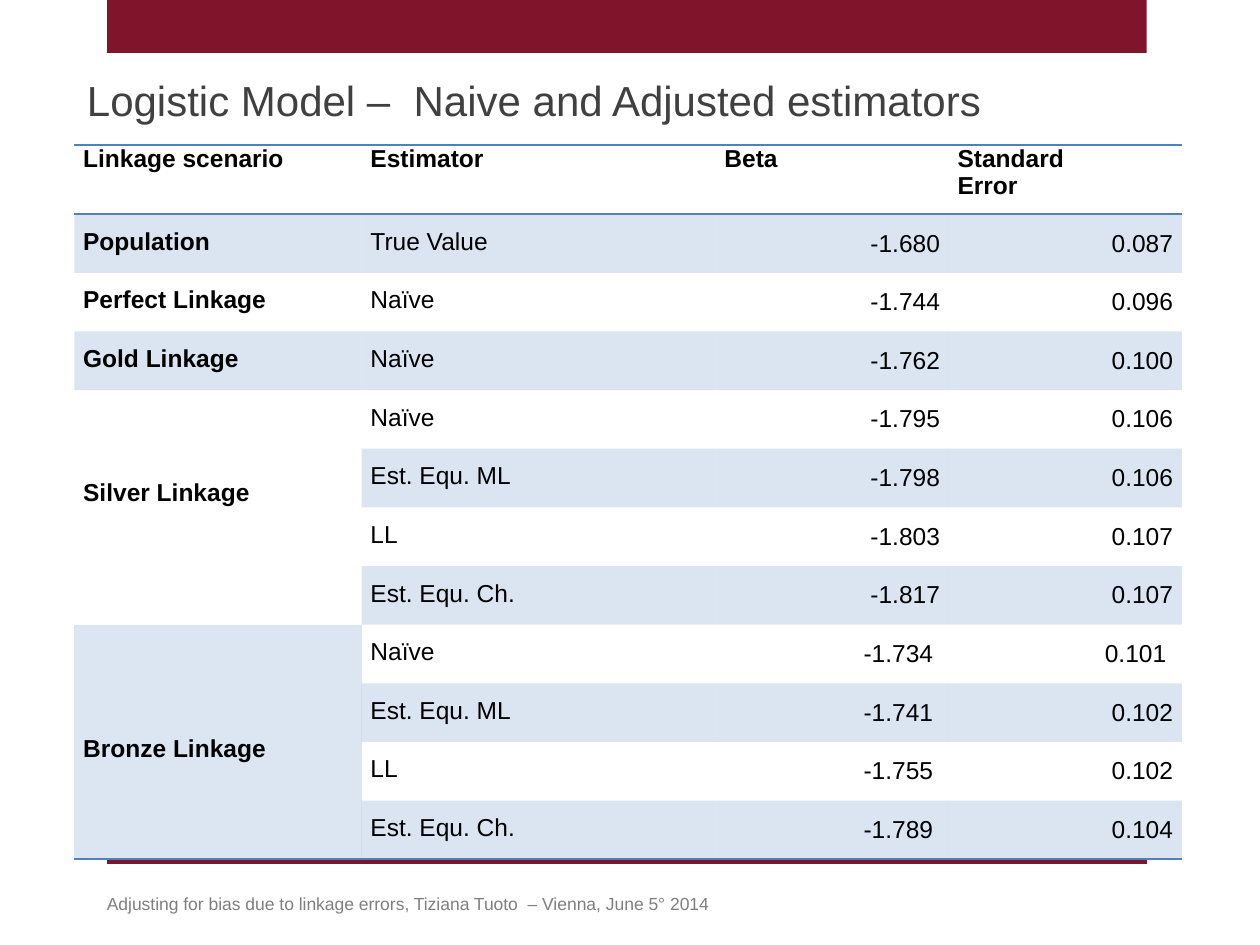
from typing import NamedTuple

from lxml.etree import SubElement
from pptx import Presentation
from pptx.dml.color import RGBColor
from pptx.enum.shapes import MSO_CONNECTOR, MSO_SHAPE
from pptx.enum.text import MSO_ANCHOR, MSO_AUTO_SIZE, PP_ALIGN
from pptx.oxml import parse_xml
from pptx.oxml.ns import nsdecls, qn
from pptx.util import Inches, Pt

MAROON = RGBColor(0x7F, 0x14, 0x2A)
BLUE = RGBColor(0x4F, 0x81, 0xBD)
PALE_BLUE = RGBColor(0xDC, 0xE6, 0xF2)
WHITE = RGBColor(0xFF, 0xFF, 0xFF)
BLACK = RGBColor(0, 0, 0)
DARK_GREY = RGBColor(0x40, 0x40, 0x40)
MID_GREY = RGBColor(0x7F, 0x7F, 0x7F)

FONT = "Arial"
HEADINGS = ("Linkage scenario", "Estimator", "Beta", "Standard\nError")
COLUMN_WIDTHS = (2.28, 2.81, 1.85, 1.85)
TABLE_HEIGHT = 5.67
HEADER_HEIGHT = 0.55


class Estimate(NamedTuple):
    estimator: str
    beta: str
    error: str


class Scenario(NamedTuple):
    name: str
    estimates: tuple[Estimate, ...]
    fill: RGBColor | None = None
    bottom_margin: float = 0


SCENARIOS = (
    Scenario("Population", (Estimate("True Value", "-1.680", "0.087"),), BLUE),
    Scenario("Perfect Linkage", (Estimate("Naïve", "-1.744", "0.096"),)),
    Scenario("Gold Linkage", (Estimate("Naïve", "-1.762", "0.100"),), BLUE),
    Scenario("Silver Linkage", (
        Estimate("Naïve", "-1.795", "0.106"),
        Estimate("Est. Equ. ML", "-1.798", "0.106"),
        Estimate("LL", "-1.803", "0.107"),
        Estimate("Est. Equ. Ch.", "-1.817", "0.107"),
    ), bottom_margin=0.33),
    Scenario("Bronze Linkage", (
        Estimate("Naïve", "-1.734 ", "0.101 "),
        Estimate("Est. Equ. ML", "-1.741 ", "0.102"),
        Estimate("LL", "-1.755 ", "0.102"),
        Estimate("Est. Equ. Ch.", "-1.789 ", "0.104"),
    ), PALE_BLUE),
)


def style_text(frame, size: float, color: RGBColor, bold: bool = False) -> None:
    for paragraph in frame.paragraphs:
        for run in paragraph.runs:
            run.font.name = FONT
            run.font.size = Pt(size)
            run.font.bold = bold
            run.font.color.rgb = color


def fill_cell(cell, color: RGBColor | None) -> None:
    """Fill a cell; BLUE is the band colour and is drawn at 20 % opacity."""
    if color is None:
        cell.fill.background()
        return
    cell.fill.solid()
    cell.fill.fore_color.rgb = color
    if color == BLUE:
        rgb = cell._tc.tcPr.find(qn("a:solidFill")).find(qn("a:srgbClr"))
        SubElement(rgb, qn("a:alpha")).set("val", "20000")


def write_cell(cell, text: str, bold: bool = False, spacing: float = 1,
               align: PP_ALIGN = PP_ALIGN.LEFT,
               anchor: MSO_ANCHOR = MSO_ANCHOR.TOP) -> None:
    cell.margin_left = cell.margin_right = Inches(0.07)
    cell.margin_top = cell.margin_bottom = 0
    cell.vertical_anchor = anchor
    cell.text_frame.text = text
    for paragraph in cell.text_frame.paragraphs:
        paragraph.alignment = align
        paragraph.line_spacing = spacing
    style_text(cell.text_frame, 14, BLACK, bold)


def add_rule(cell, *edges: str) -> None:
    """Draw thin blue borders; edges are given as lnT, lnB in that order."""
    properties = cell._tc.get_or_add_tcPr()
    for position, edge in enumerate(edges):
        properties.insert(position, parse_xml(
            f'<a:{edge} {nsdecls("a")} w="12700"><a:solidFill>'
            f'<a:srgbClr val="{BLUE}"/></a:solidFill></a:{edge}>'))


def add_estimates_table(slide) -> None:
    body_rows = sum(len(scenario.estimates) for scenario in SCENARIOS)
    frame = slide.shapes.add_table(
        body_rows + 1, len(HEADINGS), Inches(0.59), Inches(1.15),
        Inches(sum(COLUMN_WIDTHS)), Inches(TABLE_HEIGHT))
    table = frame.table
    table.first_row = table.horz_banding = False
    no_style = "{2D5ABB26-0587-4C30-8999-92F81FD0307C}"
    table._tbl.tblPr.find(qn("a:tableStyleId")).text = no_style
    for column, width in zip(table.columns, COLUMN_WIDTHS):
        column.width = Inches(width)
    for row in table.rows:
        row.height = Inches((TABLE_HEIGHT - HEADER_HEIGHT) / body_rows)
    table.rows[0].height = Inches(HEADER_HEIGHT)

    for column, heading in enumerate(HEADINGS):
        cell = table.cell(0, column)
        write_cell(cell, heading, bold=True)
        fill_cell(cell, WHITE)
        add_rule(cell, "lnT", "lnB")

    row = 1
    for scenario in SCENARIOS:
        last_row = row + len(scenario.estimates) - 1
        name_cell = table.cell(row, 0)
        merged = last_row > row
        if merged:
            name_cell.merge(table.cell(last_row, 0))
        write_cell(name_cell, scenario.name, bold=True, spacing=1.5,
                   anchor=MSO_ANCHOR.MIDDLE if merged else MSO_ANCHOR.TOP)
        name_cell.margin_bottom = Inches(scenario.bottom_margin)
        fill_cell(name_cell, scenario.fill)
        if last_row == body_rows:
            add_rule(name_cell, "lnB")
        for estimate in scenario.estimates:
            write_cell(table.cell(row, 1), estimate.estimator, spacing=1.5)
            for column, value in ((2, estimate.beta), (3, estimate.error)):
                write_cell(table.cell(row, column), value,
                           align=PP_ALIGN.RIGHT, anchor=MSO_ANCHOR.MIDDLE)
            for column in (1, 2, 3):
                fill_cell(table.cell(row, column), BLUE if row % 2 else None)
            row += 1
    for column in range(len(HEADINGS)):
        cell = table.cell(body_rows, column)
        add_rule(cell, "lnB")


def add_frame(slide) -> None:
    """Draw the maroon band at the top and the line at the foot."""
    band = slide.shapes.add_shape(
        MSO_SHAPE.RECTANGLE, Inches(0.85), 0, Inches(8.25), Inches(0.42))
    band.shadow.inherit = False
    band.fill.solid()
    band.fill.fore_color.rgb = MAROON
    band.line.fill.background()
    foot_line = slide.shapes.add_connector(
        MSO_CONNECTOR.STRAIGHT, Inches(0.85), Inches(6.84), Inches(9.1), Inches(6.84))
    foot_line.line.color.rgb = MAROON
    foot_line.line.width = Pt(2)
    SubElement(foot_line._element.spPr, qn("a:effectLst"))


def main() -> None:
    presentation = Presentation()
    presentation.slide_width = Inches(10)
    presentation.slide_height = Inches(7.5)
    slide = presentation.slides.add_slide(presentation.slide_layouts[5])
    add_frame(slide)

    title = slide.shapes.title
    title.left, title.top = Inches(0.59), Inches(0.54)
    title.width, title.height = Inches(8.83), Inches(0.5)
    title.text_frame.text = "Logistic Model –  Naive and Adjusted estimators"
    title.text_frame.auto_size = MSO_AUTO_SIZE.SHAPE_TO_FIT_TEXT
    title.text_frame.paragraphs[0].alignment = PP_ALIGN.LEFT
    style_text(title.text_frame, 24, DARK_GREY)

    footer = slide.shapes.add_textbox(
        Inches(0.75), Inches(7.04), Inches(5.13), Inches(0.27))
    footer.text_frame.word_wrap = True
    footer.text_frame.auto_size = MSO_AUTO_SIZE.SHAPE_TO_FIT_TEXT
    footer.text_frame.text = (
        "Adjusting for bias due to linkage errors, Tiziana Tuoto  – Vienna, June 5° 2014")
    style_text(footer.text_frame, 10, MID_GREY)

    add_estimates_table(slide)
    presentation.save("out.pptx")


if __name__ == "__main__":
    main()
